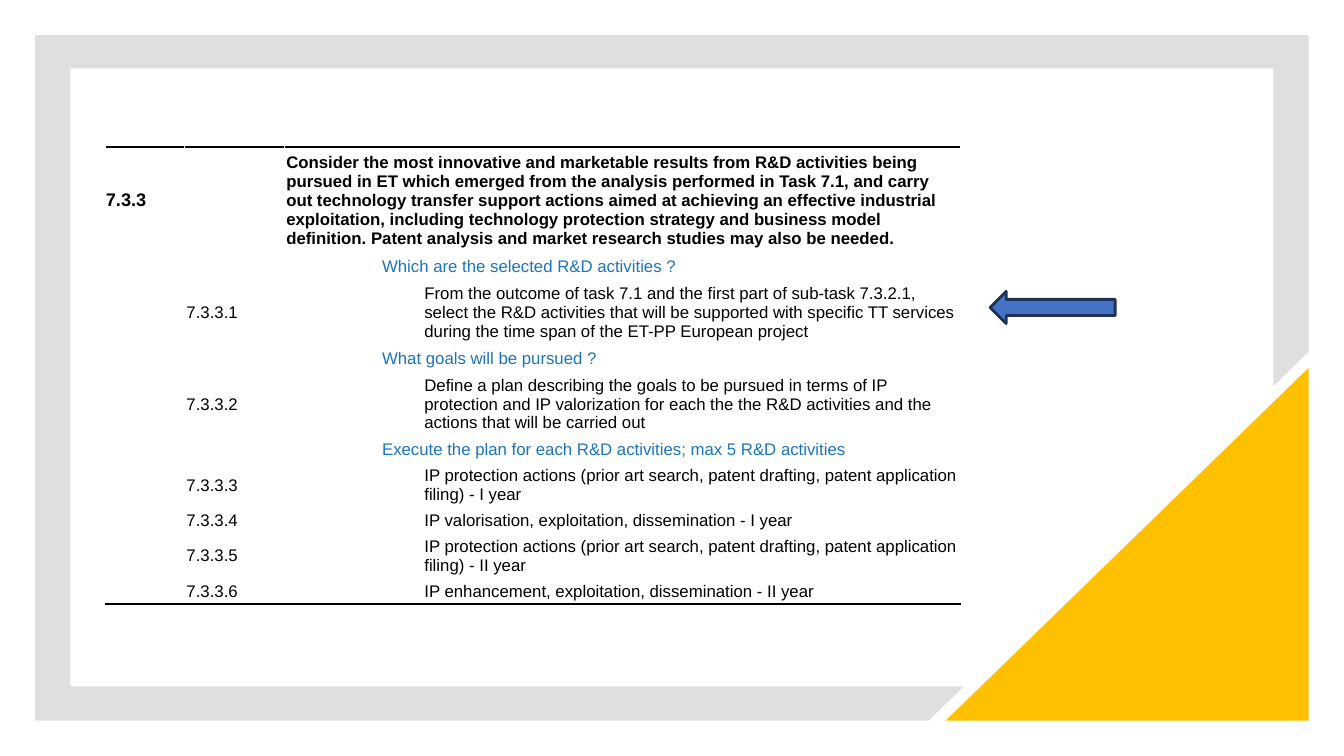
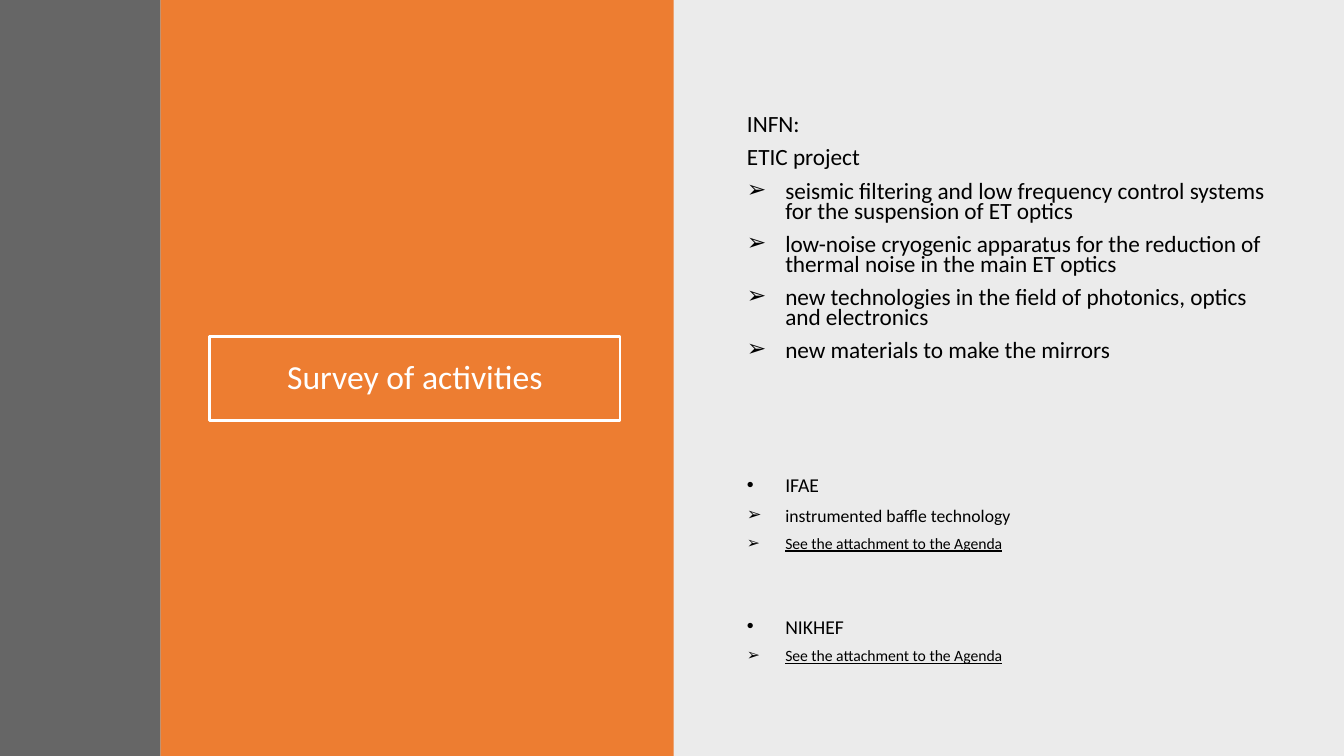
from dataclasses import dataclass
from typing import Any, Optional, Sequence

from lxml import etree
from pptx import Presentation
from pptx import util as u
from pptx.dml.color import RGBColor
from pptx.enum import shapes, text
from pptx.oxml.ns import qn


@dataclass(frozen=True)
class Theme:
    white: str = "FFFFFF"
    black: str = "000000"
    frame: str = "DFDFDF"
    panel: str = "EBEBEB"
    strip: str = "666666"
    gold: str = "FFC000"
    orange: str = "ED7D31"
    arrow: str = "4472C4"
    arrow_line: str = "1E3256"
    question: str = "1B75BC"
    table_font: str = "Arial"
    body_font: str = "Calibri"
    title_size: float = 24
    number_size: float = 13
    table_size: float = 12
    lead_size: float = 16.6
    site_size: float = 14
    topic_size: float = 12.6
    note_size: float = 11.2
    line_width: float = 2


THEME = Theme()


@dataclass(frozen=True)
class Box:
    left: float
    top: float
    width: float
    height: float

    def emu(self) -> list[u.Length]:
        return [u.Inches(v) for v in (self.left, self.top, self.width, self.height)]


@dataclass(frozen=True)
class TaskRow:
    height: float
    number: str
    description: str


@dataclass(frozen=True)
class Item:
    content: str
    size: float
    bullet: Optional[str] = None
    underline: bool = False
    space_before: float = 10


# Content
HEADING = TaskRow(
    1.06, "7.3.3",
    "Consider the most innovative and marketable results from R&D activities being "
    "pursued in ET which emerged from the analysis performed in Task 7.1, and carry out "
    "technology transfer support actions aimed at achieving an effective industrial "
    "exploitation, including technology protection strategy and business model definition. "
    "Patent analysis and market research studies may also be needed.")
TASKS = [  # rows without a number are questions
    TaskRow(0.25, "", "Which are the selected R&D activities ?"),
    TaskRow(0.66, "7.3.3.1",
            "From the outcome of task 7.1 and the first part of sub-task 7.3.2.1, select the "
            "R&D activities that will be supported with specific TT services during the time "
            "span of the ET-PP European project"),
    TaskRow(0.25, "", "What goals will be pursued ?"),
    TaskRow(0.66, "7.3.3.2",
            "Define a plan describing the goals to be pursued in terms of IP protection and "
            "IP valorization for each the the R&D activities and the actions that will be "
            "carried out"),
    TaskRow(0.25, "", "Execute the plan for each R&D activities; max 5 R&D activities"),
    TaskRow(0.45, "7.3.3.3",
            "IP protection actions (prior art search, patent drafting, patent application "
            "filing) - I year"),
    TaskRow(0.25, "7.3.3.4", "IP valorisation, exploitation, dissemination - I year"),
    TaskRow(0.45, "7.3.3.5",
            "IP protection actions (prior art search, patent drafting, patent application "
            "filing) - II year"),
    TaskRow(0.25, "7.3.3.6", "IP enhancement, exploitation, dissemination - II year"),
]
COLUMN_WIDTHS = [0.78, 0.99, 0.95, 0.42, 5.34]

ARROW, DOT = "➢", "•"
NOTE = Item("See the attachment to the Agenda", THEME.note_size, ARROW, underline=True)
PROJECT_ITEMS = [
    Item("INFN:", THEME.lead_size, space_before=0),
    Item("ETIC project", THEME.lead_size),
    *(Item(topic, THEME.lead_size, ARROW) for topic in (
        "seismic filtering and low frequency control systems for the suspension of ET optics",
        "low-noise cryogenic apparatus for the reduction of thermal noise in the main ET optics",
        "new technologies in the field of photonics, optics and electronics",
        "new materials to make the mirrors")),
]
SITE_ITEMS = [
    Item("IFAE", THEME.site_size, DOT, space_before=0),
    Item("instrumented baffle technology", THEME.topic_size, ARROW),
    NOTE,
    Item("NIKHEF", THEME.site_size, DOT, space_before=49),
    NOTE,
]


# Shared drawing functions
def rgb(color: str) -> RGBColor:
    return RGBColor.from_string(color)


def paint(shape: Any, fill: str, line: Optional[str] = None) -> None:
    shape.shadow.inherit = False
    shape.fill.solid()
    shape.fill.fore_color.rgb = rgb(fill)
    if line:
        shape.line.color.rgb = rgb(line)
        shape.line.width = u.Pt(THEME.line_width)
    else:
        shape.line.fill.background()


def add_shape(slide: Any, kind: shapes.MSO_SHAPE, box: Box, fill: str,
              line: Optional[str] = None) -> Any:
    shape = slide.shapes.add_shape(kind, *box.emu())
    paint(shape, fill, line)
    return shape


def format_font(font: Any, name: str, size: float, color: str, bold: bool = False) -> None:
    font.name, font.size, font.bold = name, u.Pt(size), bold
    font.color.rgb = rgb(color)


# Task table
def add_border(cell: Any, side: str) -> None:
    line = etree.Element(qn(f"a:{side}"), w=str(u.Pt(THEME.line_width)))
    fill = etree.SubElement(line, qn("a:solidFill"))
    etree.SubElement(fill, qn("a:srgbClr"), val=THEME.black)
    cell._tc.get_or_add_tcPr().insert(0, line)


def write_cell(cell: Any, content: str, color: str = THEME.black,
               size: float = THEME.table_size, bold: bool = False) -> None:
    cell.text_frame.text = content
    format_font(cell.text_frame.paragraphs[0].runs[0].font,
                THEME.table_font, size, color, bold)


def prepare_cell(cell: Any, margin: float) -> None:
    cell.fill.solid()
    cell.fill.fore_color.rgb = rgb(THEME.white)
    cell.vertical_anchor = text.MSO_ANCHOR.MIDDLE
    cell.margin_left = cell.margin_right = u.Inches(margin)
    cell.margin_top = cell.margin_bottom = 0
    # Empty cells must not stretch the low rows
    etree.SubElement(cell.text_frame.paragraphs[0]._p, qn("a:endParaRPr"),
                     sz=str(int(THEME.table_size * 100)))


def add_task_table(slide: Any, left: float, top: float) -> None:
    rows = [HEADING, *TASKS]
    box = Box(left, top, sum(COLUMN_WIDTHS), sum(row.height for row in rows))
    table = slide.shapes.add_table(len(rows), len(COLUMN_WIDTHS), *box.emu()).table
    table.first_row = table.horz_banding = False
    for column, width in zip(table.columns, COLUMN_WIDTHS):
        column.width = u.Inches(width)
    for index, row in enumerate(rows):
        table.rows[index].height = u.Inches(row.height)
        for column_index in range(len(COLUMN_WIDTHS)):
            heading_number = index == 0 and column_index == 0
            prepare_cell(table.cell(index, column_index), 0 if heading_number else 0.02)
    for column_index in range(len(COLUMN_WIDTHS)):
        add_border(table.cell(0, column_index), "lnT")
        add_border(table.cell(len(rows) - 1, column_index), "lnB")

    table.cell(0, 2).merge(table.cell(0, 4))
    write_cell(table.cell(0, 0), HEADING.number, size=THEME.number_size, bold=True)
    write_cell(table.cell(0, 2), HEADING.description, bold=True)
    for index, row in enumerate(TASKS, start=1):
        if row.number:
            write_cell(table.cell(index, 1), row.number)
            write_cell(table.cell(index, 4), row.description)
        else:
            table.cell(index, 3).merge(table.cell(index, 4))
            write_cell(table.cell(index, 3), row.description, THEME.question)


# Bulleted text
def set_indent(paragraph: Any, bullet: Optional[str]) -> None:
    properties = paragraph._p.get_or_add_pPr()
    properties.set("marL", str(u.Inches(0.5 if bullet else 0.12)))
    properties.set("indent", str(u.Inches(-0.38 if bullet else 0)))
    if bullet:
        color = etree.SubElement(properties, qn("a:buClr"))
        etree.SubElement(color, qn("a:srgbClr"), val=THEME.black)
        etree.SubElement(properties, qn("a:buFont"), typeface="Arial")
        etree.SubElement(properties, qn("a:buChar"), char=bullet)


def add_items(slide: Any, box: Box, items: Sequence[Item]) -> None:
    frame = slide.shapes.add_textbox(*box.emu()).text_frame
    frame.word_wrap = True
    for index, item in enumerate(items):
        paragraph = frame.add_paragraph() if index else frame.paragraphs[0]
        paragraph.text = item.content
        paragraph.line_spacing = 0.7
        paragraph.space_before = u.Pt(item.space_before)
        set_indent(paragraph, item.bullet)
        font = paragraph.runs[0].font
        format_font(font, THEME.body_font, item.size, THEME.black)
        font.underline = item.underline


# Slides
def build_task_slide(presentation: Any) -> None:
    slide = presentation.slides.add_slide(presentation.slide_layouts[6])

    # Frame, open at the lower right corner
    outline = [(0.35, 0.35), (12.98, 0.35), (12.98, 3.49), (12.63, 3.83), (12.63, 0.68),
               (0.7, 0.68), (0.7, 6.81), (9.56, 6.81), (9.21, 7.15), (0.35, 7.15)]
    points = [(u.Inches(x), u.Inches(y)) for x, y in outline]
    builder = slide.shapes.build_freeform(*points[0])
    builder.add_line_segments(points[1:], close=True)
    paint(builder.convert_to_shape(), THEME.frame)

    # Corner triangle
    corner = add_shape(slide, shapes.MSO_SHAPE.RIGHT_TRIANGLE,
                       Box(9.38, 3.65, 3.6, 3.5), THEME.gold)
    corner._element.spPr.find(qn("a:xfrm")).set("flipH", "1")

    # Table and pointer
    add_task_table(slide, 1.05, 1.46)
    add_shape(slide, shapes.MSO_SHAPE.LEFT_ARROW, Box(9.82, 2.89, 1.24, 0.32),
              THEME.arrow, THEME.arrow_line)


def build_survey_slide(presentation: Any) -> None:
    slide = presentation.slides.add_slide(presentation.slide_layouts[5])

    # Vertical bands
    for left, width, color in ((6.67, 6.67, THEME.panel), (1.59, 5.09, THEME.orange),
                               (0, 1.59, THEME.strip)):
        add_shape(slide, shapes.MSO_SHAPE.RECTANGLE, Box(left, 0, width, 7.5), color)

    # Framed title, brought in front of the bands
    title = slide.shapes.title
    title.left, title.top, title.width, title.height = Box(2.08, 3.34, 4.07, 0.83).emu()
    title.line.color.rgb = rgb(THEME.white)
    title.line.width = u.Pt(THEME.line_width)
    frame = title.text_frame
    frame.text = "Survey of activities"
    frame.word_wrap = True
    frame.auto_size = text.MSO_AUTO_SIZE.NONE
    frame.vertical_anchor = text.MSO_ANCHOR.MIDDLE
    paragraph = frame.paragraphs[0]
    paragraph.alignment = text.PP_ALIGN.CENTER
    paragraph.line_spacing = 0.9
    format_font(paragraph.runs[0].font, THEME.body_font, THEME.title_size, THEME.white)
    slide.shapes._spTree.append(title._element)

    # Activities
    add_items(slide, Box(7.19, 1.11, 5.53, 2.9), PROJECT_ITEMS)
    add_items(slide, Box(7.19, 4.71, 5.53, 2.09), SITE_ITEMS)


def main() -> None:
    presentation = Presentation()
    presentation.slide_width = u.Inches(13.33)
    presentation.slide_height = u.Inches(7.5)
    build_task_slide(presentation)
    build_survey_slide(presentation)
    presentation.save("out.pptx")


if __name__ == "__main__":
    main()
